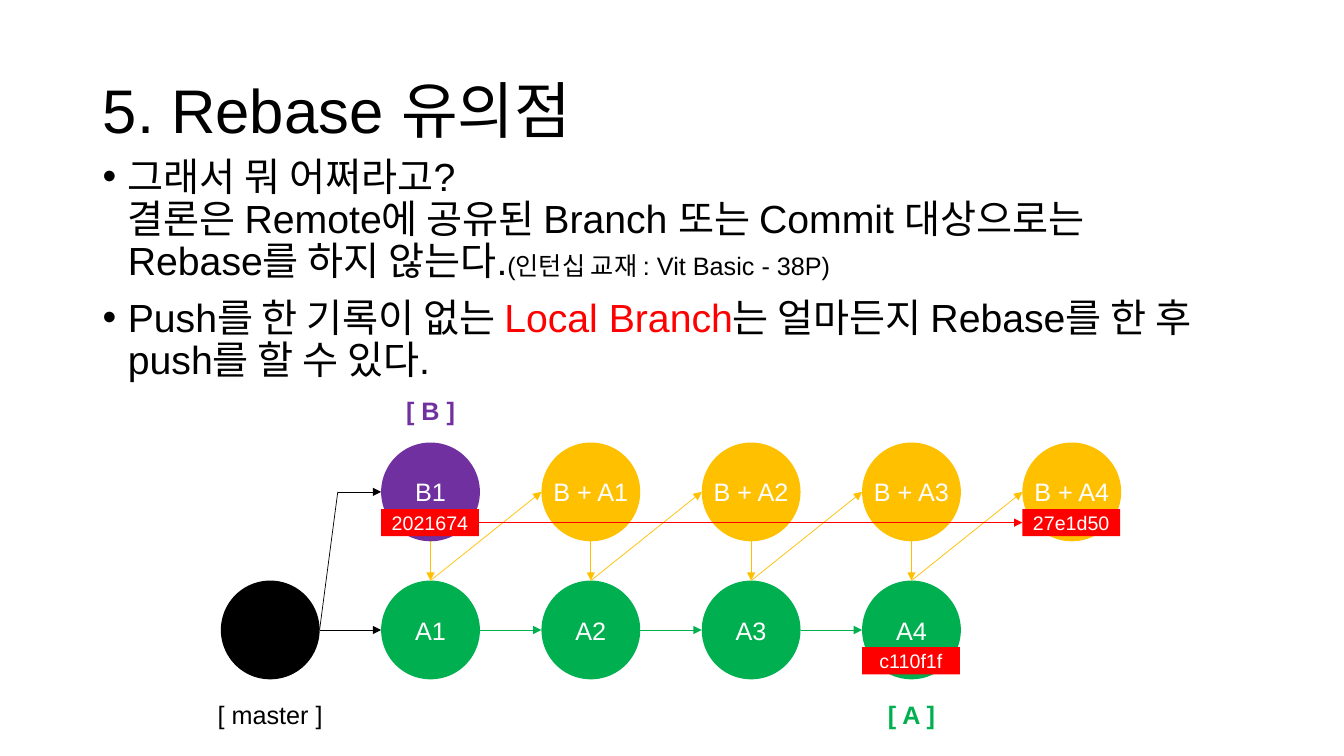
from lxml import etree
from pptx import Presentation
from pptx import util as u
from pptx.dml.color import RGBColor
from pptx.enum import shapes, text
from pptx.oxml.ns import qn

COLORS = {
    "black": "000000", "white": "FFFFFF", "red": "FF0000",
    "green": "00B050", "purple": "7030A0", "amber": "FFC000",
}
DIAMETER, PITCH = 0.98, 1.59
TAG_W, TAG_H, TAG_DROP = 0.97, 0.27, 0.66


def rgb(name):
    """Return the named palette colour."""
    return RGBColor.from_string(COLORS[name])


def add_text(p, content, size=18, color="black", bold=False):
    """Append content to a paragraph, breaking lines at newlines."""
    for i, line in enumerate(content.split("\n")):
        if i:
            p.add_line_break()
        r = p.add_run()
        r.text = line
        r.font.name = "Arial"
        r.font.size = u.Pt(size)
        r.font.bold = bold
        r.font.color.rgb = rgb(color)


def add_shape(s, kind, x, y, w, h, fill, label="", size=18, wrap=False):
    """Draw a filled shape with a centred white label."""
    sp = s.shapes.add_shape(kind, *map(u.Inches, (x, y, w, h)))
    sp.shadow.inherit = False
    sp.fill.solid()
    sp.fill.fore_color.rgb = rgb(fill)
    sp.line.fill.background()
    if label:
        tf = sp.text_frame
        tf.word_wrap = wrap
        tf.vertical_anchor = text.MSO_ANCHOR.MIDDLE
        p = tf.paragraphs[0]
        p.alignment = text.PP_ALIGN.CENTER
        add_text(p, label, size=size, color="white")
    return sp


def add_line(s, start, end, color, arrow=True):
    """Draw a thin straight line, with an arrowhead at its end by default."""
    ends = map(u.Inches, (*start, *end))
    c = s.shapes.add_connector(shapes.MSO_CONNECTOR.STRAIGHT, *ends)
    c.line.width = u.Pt(0.5)
    c.line.color.rgb = rgb(color)
    if arrow:
        etree.SubElement(c.line._get_or_add_ln(), qn("a:tailEnd"), type="triangle")
    etree.SubElement(c._element.spPr, qn("a:effectLst"))
    return c


def add_label(s, content, x, y, w, h, **fmt):
    """Place a centred branch label."""
    tf = s.shapes.add_textbox(*map(u.Inches, (x, y, w, h))).text_frame
    tf.word_wrap = False
    tf.auto_size = text.MSO_AUTO_SIZE.SHAPE_TO_FIT_TEXT
    p = tf.paragraphs[0]
    p.alignment = text.PP_ALIGN.CENTER
    add_text(p, content, **fmt)


def add_title(s, content, x, y, w, h):
    """Move and format the title placeholder."""
    sp = s.shapes.title
    sp.left, sp.top, sp.width, sp.height = map(u.Inches, (x, y, w, h))
    tf = sp.text_frame
    tf.word_wrap = True
    tf.auto_size = text.MSO_AUTO_SIZE.NONE
    tf.vertical_anchor = text.MSO_ANCHOR.MIDDLE
    p = tf.paragraphs[0]
    p.alignment = text.PP_ALIGN.LEFT
    p.line_spacing = 0.9
    add_text(p, content, size=44)


def add_bullets(s, items, x, y, w, h):
    """Write bulleted paragraphs, each a list of text and format pairs."""
    tf = s.shapes.add_textbox(*map(u.Inches, (x, y, w, h))).text_frame
    tf.word_wrap = True
    for i, parts in enumerate(items):
        p = tf.add_paragraph() if i else tf.paragraphs[0]
        p.line_spacing = 0.9
        p.space_before = u.Pt(10)
        pPr = p._p.get_or_add_pPr()
        pPr.set("marL", str(u.Inches(0.25)))
        pPr.set("indent", str(u.Inches(-0.25)))
        etree.SubElement(pPr, qn("a:buFont"), typeface="Arial")
        etree.SubElement(pPr, qn("a:buChar"), char="•")
        for content, fmt in parts:
            add_text(p, content, **{"size": 28, **fmt})


def add_graph(s, x, y, w, h):
    """Draw the commit graph with branch B above branch A."""
    oval, rect = shapes.MSO_SHAPE.OVAL, shapes.MSO_SHAPE.RECTANGLE
    radius = DIAMETER / 2
    top, low = y + 0.52, y + 1.89
    top_mid, low_mid = top + radius, low + radius
    cols = [x + 0.34 + i * PITCH for i in range(6)]
    master_right = cols[0] + DIAMETER
    bend = (master_right + 0.18, top_mid)

    add_shape(s, oval, cols[0], low, DIAMETER, DIAMETER, "black")
    add_shape(s, oval, cols[1], top, DIAMETER, DIAMETER, "purple", "B1")
    for i in range(1, 5):
        add_shape(s, oval, cols[i], low, DIAMETER, DIAMETER, "green", f"A{i}")
        add_shape(s, oval, cols[i + 1], top, DIAMETER, DIAMETER, "amber", f"B + A{i}")

    add_line(s, (master_right, low_mid), bend, "black", arrow=False)
    add_line(s, bend, (cols[1], top_mid), "black")
    for i in range(1, 5):
        mid = cols[i] + radius
        add_line(s, (cols[i - 1] + DIAMETER, low_mid), (cols[i], low_mid),
                 "black" if i == 1 else "green")
        add_line(s, (mid, top + DIAMETER), (mid, low), "amber")
        add_line(s, (mid, low), (cols[i + 1], top_mid), "amber")

    tags = [
        add_shape(s, rect, cols[col], row + TAG_DROP, TAG_W, TAG_H, "red",
                  commit, size=14, wrap=True)
        for col, row, commit in ((1, top, "2021674"), (5, top, "27e1d50"),
                                 (4, low, "c110f1f"))
    ]
    tag_mid = top + TAG_DROP + TAG_H / 2
    c = add_line(s, (cols[1] + TAG_W, tag_mid), (cols[5], tag_mid), "red")
    c.begin_connect(tags[0], 3)
    c.end_connect(tags[1], 1)

    label_y = y + h - 0.54
    add_label(s, "[ master ]", x, label_y, 1.66, 0.4)
    for content, col, row, color in (("[ A ]", 4, label_y, "green"),
                                     ("[ B ]", 1, y, "purple")):
        add_label(s, content, cols[col], row, DIAMETER, 0.4, color=color, bold=True)


def main():
    """Build the slide and save it."""
    prs = Presentation()
    prs.slide_width, prs.slide_height = u.Inches(13.33), u.Inches(7.5)
    s = prs.slides.add_slide(prs.slide_layouts[5])
    add_title(s, "5. Rebase 유의점", 0.92, 0.4, 11.5, 1.45)
    add_bullets(s, [
        [("그래서 뭐 어쩌라고?\n결론은 Remote에 공유된 Branch 또는 Commit 대상으로는 "
          "Rebase를 하지 않는다.", {}),
         ("(인턴십 교재 : Vit Basic - 38P)", {"size": 18})],
        [("Push를 한 기록이 없는 ", {}),
         ("Local Branch", {"color": "red"}),
         ("는 얼마든지 Rebase를 한 후 push를 할 수 있다.", {})],
    ], 0.92, 1.51, 11.3, 2.51)
    add_graph(s, 1.85, 3.87, 9.27, 3.56)
    prs.save("out.pptx")


if __name__ == "__main__":
    main()
